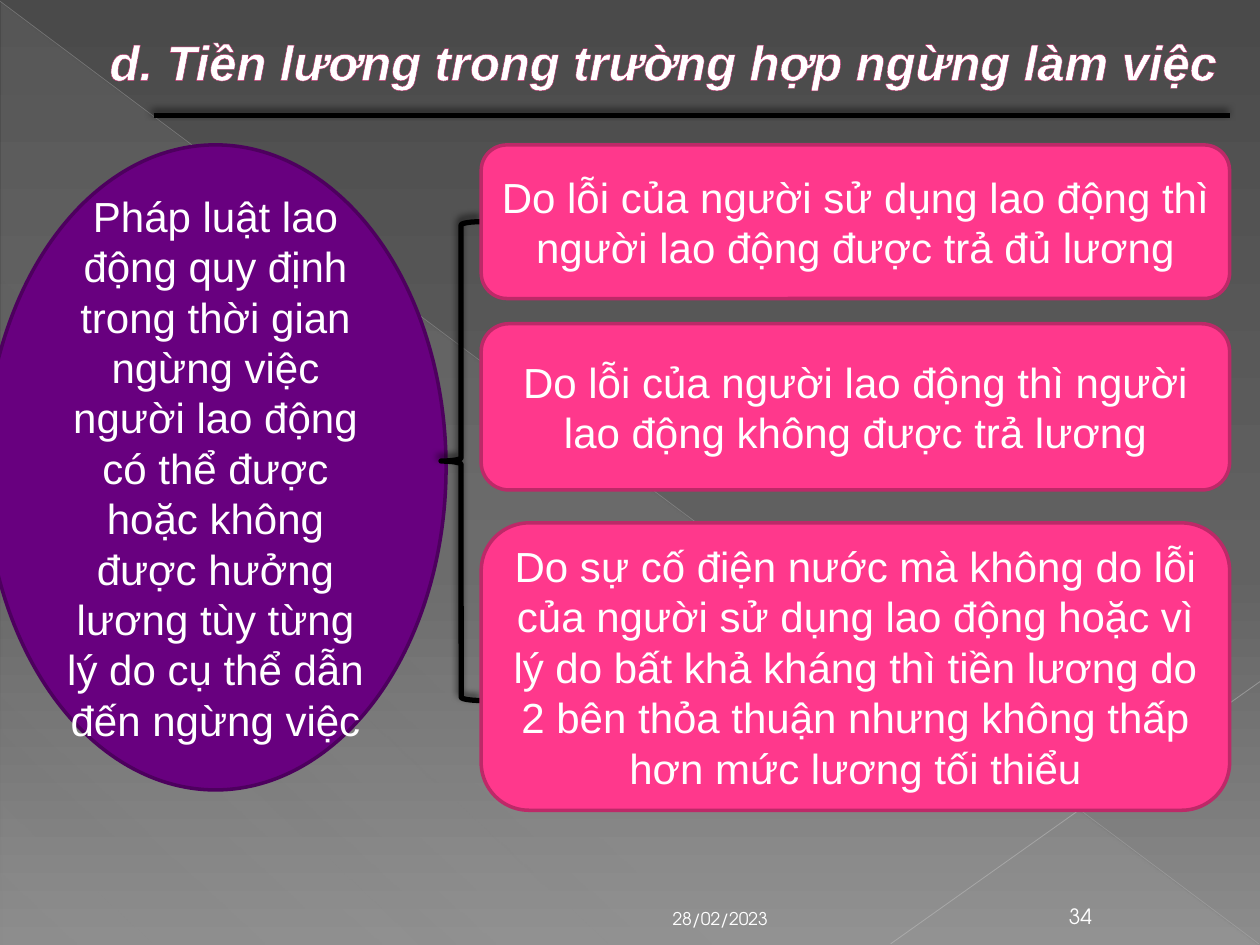
from pptx import Presentation
from pptx.dml.color import RGBColor as RGB
from pptx.enum.shapes import MSO_CONNECTOR, MSO_SHAPE as SHAPE
from pptx.enum.text import MSO_ANCHOR as ANCHOR, PP_ALIGN as ALIGN
from pptx.oxml import parse_xml
from pptx.oxml.ns import nsdecls, qn
from pptx.util import Pt

TITLE = "d. Tiền lương trong trường hợp ngừng làm việc"
RULE = ("Pháp luật lao động quy định trong thời gian ngừng việc người lao động có thể được "
        "hoặc không được hưởng lương tùy từng lý do cụ thể dẫn đến ngừng việc")
CASES = [
    (82.8, 87.8, "Do lỗi của người sử dụng lao động thì người lao động được trả đủ lương"),
    (185, 95, "Do lỗi của người lao động thì người lao động không được trả lương"),
    (298.8, 164.2, "Do sự cố điện nước mà không do lỗi của người sử dụng lao động hoặc vì lý do "
     "bất khả kháng thì tiền lương do 2 bên thỏa thuận nhưng không thấp hơn mức lương tối thiểu"),
]
FOOTERS = [
    (377.3, 167.8, "28/02/2023", 10, ALIGN.LEFT),
    (597.6, 39.6, "34", 12, ALIGN.CENTER),
]
DIAGONALS = [
    ((0, 0.7, 719.3, 539.3), "diagonal", 0.39, 35),
    ((720, 389.5, 509, 539.3), "corner", 0.47, 45),
]
BACKDROP = [(0, "4A4A4A", 100), (60, "626262", 100), (100, "8C8C8C", 100)]
SHEEN = [(0, "D2D2D2", 10), (70, "D2D2D2", 8), (100, "D2D2D2", 1)]
COLORS = {
    "text": "FFFFFF", "title_edge": "B12761", "black": "000000",
    "rule": "68007F", "rule_edge": "4D005E", "case": "FF388C", "case_edge": "BD2968",
    "diagonal": "BFBFBF", "corner": "C6C6C6",
}
FONT, FOOT_FONT = "Arial", "TeX Gyre Adventor"
CASE_LEFT, CASE_WIDTH = 275, 427.7


def color(name):
    return RGB.from_string(COLORS[name])


def set_gradient(fill, root, stops, angle):
    fill.gradient()
    old = root.find(".//" + qn("a:gradFill"))
    gs = "".join(f'<a:gs pos="{pos * 1000}"><a:srgbClr val="{rgb}"><a:alpha val="{alpha * 1000}"/>'
                 f'</a:srgbClr></a:gs>' for pos, rgb, alpha in stops)
    old.getparent().replace(old, parse_xml(
        f'<a:gradFill {nsdecls("a")} rotWithShape="1"><a:gsLst>{gs}</a:gsLst>'
        f'<a:lin ang="{angle * 60000}" scaled="0"/></a:gradFill>'))


def set_effects(s, shadow=False):
    inner = ('<a:outerShdw blurRad="50800" dist="38100" dir="14700000" algn="ctr" rotWithShape="0">'
             f'<a:srgbClr val="{COLORS["black"]}"><a:alpha val="60000"/></a:srgbClr>'
             '</a:outerShdw>') if shadow else ""
    for old in s._element.spPr.findall(qn("a:effectLst")):
        s._element.spPr.remove(old)
    s._element.spPr.append(parse_xml(f'<a:effectLst {nsdecls("a")}>{inner}</a:effectLst>'))


def set_line(s, name, width):
    s.line.color.rgb = color(name)
    s.line.width = Pt(width)


def add_line(shapes, ends, name, width, shadow=False):
    s = shapes.add_connector(MSO_CONNECTOR.STRAIGHT, *map(Pt, ends))
    set_line(s, name, width)
    set_effects(s, shadow)
    return s


def set_text(s, text, size, font=FONT, align=ALIGN.CENTER, anchor=ANCHOR.MIDDLE):
    tf = s.text_frame
    tf.text, tf.word_wrap, tf.vertical_anchor = text, True, anchor
    p = tf.paragraphs[0]
    p.alignment = align
    r = p.runs[0]
    r.font.size, r.font.name, r.font.color.rgb = Pt(size), font, color("text")
    return p, r


def add_panel(shapes, kind, box, name, text):
    s = shapes.add_shape(kind, *map(Pt, box))
    s.shadow.inherit = False
    s.fill.solid()
    s.fill.fore_color.rgb = color(name)
    set_line(s, name + "_edge", 2)
    set_text(s, text, 24)


def add_backdrop(slide):
    set_gradient(slide.background.fill, slide._element, BACKDROP, 90)
    s = slide.shapes.add_shape(SHAPE.RIGHT_TRIANGLE, Pt(0.7), Pt(1.4), Pt(718.6), Pt(538.6))
    s.shadow.inherit = False
    s.line.fill.background()
    set_gradient(s.fill, s._element, SHEEN, 133)
    for ends, name, width, alpha in DIAGONALS:
        s = add_line(slide.shapes, ends, name, width)
        clr = s._element.spPr.find(".//" + qn("a:srgbClr"))
        clr.append(parse_xml(f'<a:alpha {nsdecls("a")} val="{alpha * 1000}"/>'))


def add_title(slide):
    s = slide.shapes.title
    slide.shapes._spTree.append(s._element)
    s.left, s.top, s.width, s.height = Pt(0), Pt(-2.2), Pt(720), Pt(74.2)
    p, r = set_text(s, TITLE, 28)
    p._p.get_or_add_pPr().set("marL", str(Pt(38.2)))
    p._p.get_or_add_pPr().set("indent", "0")
    r.font.bold = r.font.italic = True
    r._r.get_or_add_rPr().insert(0, parse_xml(
        f'<a:ln {nsdecls("a")} w="{Pt(0.5)}"><a:solidFill>'
        f'<a:srgbClr val="{COLORS["title_edge"]}"/></a:solidFill></a:ln>'))


def main():
    """Build the slide on wages during work stoppage."""
    prs = Presentation()
    prs.slide_width, prs.slide_height = Pt(720), Pt(540)
    slide = prs.slides.add_slide(prs.slide_layouts[5])
    shapes = slide.shapes
    add_backdrop(slide)
    add_title(slide)
    for left, width, text, size, align in FOOTERS:
        s = shapes.add_textbox(Pt(left), Pt(510.5), Pt(width), Pt(23.8))
        set_text(s, text, size, FOOT_FONT, align, ANCHOR.BOTTOM)
    add_line(shapes, (87.8, 66.2, 702.7, 66.2), "black", 3, shadow=True)
    add_panel(shapes, SHAPE.OVAL, (-8.6, 82.8, 263.5, 368.6), "rule", RULE)
    brace = shapes.add_shape(SHAPE.LEFT_BRACE, Pt(252), Pt(126.7), Pt(23), Pt(273.6))
    brace.fill.background()
    set_line(brace, "black", 3)
    set_effects(brace, shadow=True)
    for top, height, text in CASES:
        box = (CASE_LEFT, top, CASE_WIDTH, height)
        add_panel(shapes, SHAPE.ROUNDED_RECTANGLE, box, "case", text)
    prs.save("out.pptx")


if __name__ == "__main__":
    main()
